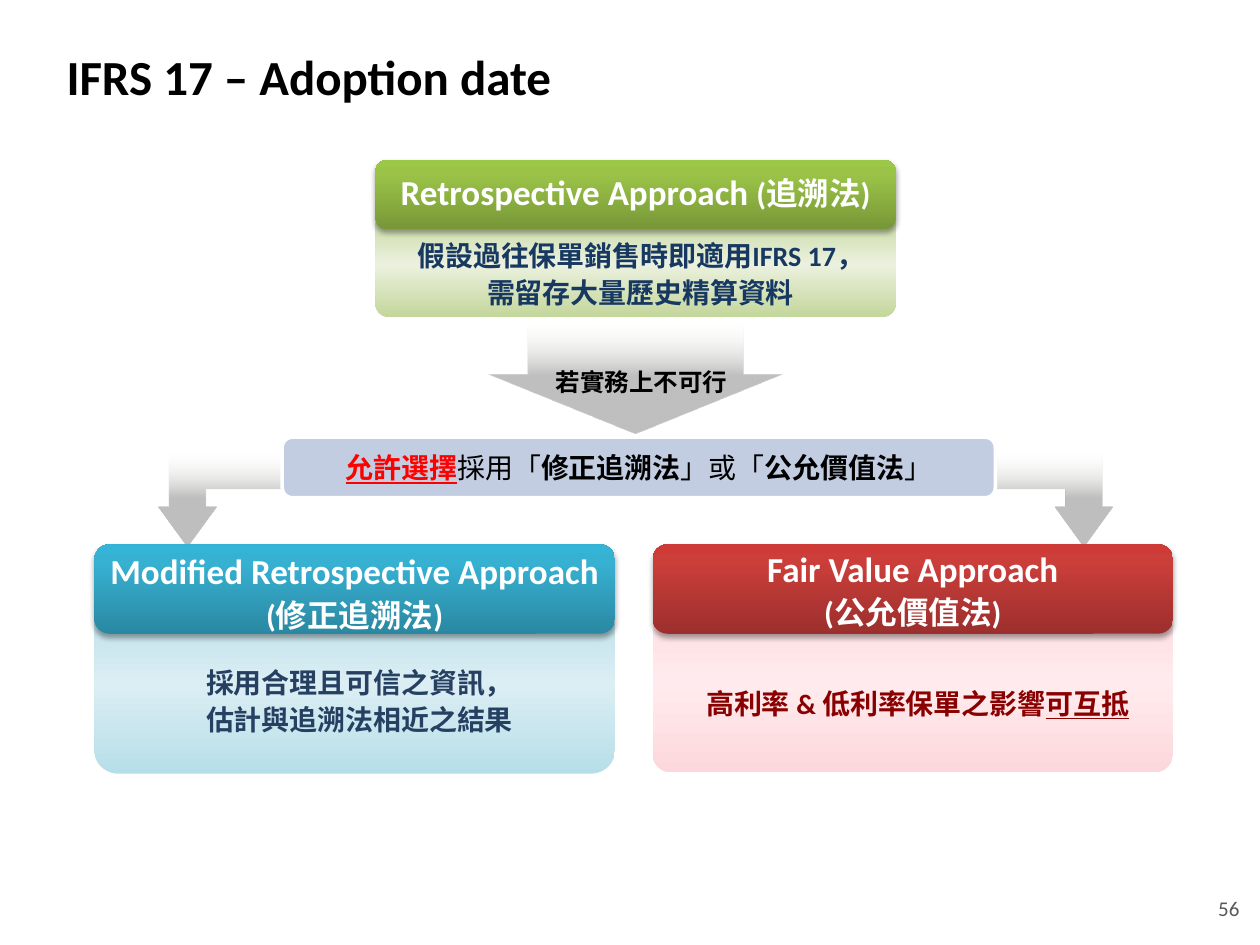
from pptx import Presentation
from pptx.dml.color import RGBColor
from pptx.enum.shapes import MSO_SHAPE
from pptx.enum.text import MSO_ANCHOR, PP_ALIGN
from pptx.oxml import parse_xml
from pptx.oxml.ns import nsdecls, qn
from pptx.util import Inches, Pt

# Content: a run is (text, format); a paragraph is a list of runs
TITLE = "IFRS 17 – Adoption date"
PAGE_NUMBER = "56"
CONDITION = "若實務上不可行"
RED = {"color": "FF0000", "underline": True}
CHOICE = [("允許選擇", RED), ("採用「", {"bold": False}), ("修正追溯法", {}),
          ("」或「", {"bold": False}), ("公允價值法", {}), ("」", {"bold": False})]
SMALLER = {"size": 18}

APPROACHES = [
    {"left": 2.98, "top": 1.27, "head_height": 0.55, "head_spacing": 0.85, "head_inset": 0,
     "head": [("Retrospective Approach ", {}), ("(追溯法)", SMALLER)],
     "head_colors": ("779737", "9BC348", "9DC746"),
     "body_top": 1.68, "body_height": 0.84, "body_inset": 0.12, "corner": 0.132,
     "body": [[("假設過往保單銷售時即適用IFRS 17，", {})], [("需留存大量歷史精算資料", {})]],
     "body_colors": ("C3D69B", "EBF1DE", "C3D69B"), "body_text": "173861"},
    {"left": 5.18, "top": 4.32, "head_height": 0.71, "head_spacing": Pt(24), "head_inset": 0,
     "head": [("Fair Value Approach\n", {}), ("(公允價值法)", SMALLER)],
     "head_colors": ("9C2F2D", "CB3E3A", "CE3B37"),
     "body_top": 4.71, "body_height": 1.42, "body_inset": 0.29, "corner": 0.1,
     "body": [[("高利率 & 低利率保單之影響", {}), ("可互抵", {"underline": True})]],
     "body_colors": ("FCD8DC", "FFEBED", "FCD8DC"), "body_text": "8A0000"},
    {"left": 0.75, "top": 4.32, "head_height": 0.71, "head_spacing": Pt(24), "head_inset": 0.04,
     "head": [("Modified Retrospective Approach\n", {}), ("(修正追溯法)", SMALLER)],
     "head_colors": ("2A88A2", "37B1D2", "34B4D6"),
     "body_top": 4.72, "body_height": 1.42, "body_inset": 0.24, "corner": 0.132,
     "body": [[("採用合理且可信之資訊，", {})], [("估計與追溯法相近之結果", {})]],
     "body_colors": ("B7DEE8", "DBEEF4", "B7DEE8"), "body_text": "254061"},
]
CARD_WIDTH = 4.13

# Arrows: preset, box, adjustments, mirrored
BEND = (0.387, 0.307, 0.425)
BENT_ARROWS = [
    (MSO_SHAPE.BENT_UP_ARROW, (7.85, 3.59, 0.98, 0.75), BEND, True),
    (MSO_SHAPE.BENT_UP_ARROW, (1.26, 3.59, 0.98, 0.75), BEND, False),
]
DOWN_ARROW = (MSO_SHAPE.UP_ARROW, (3.88, 2.56, 2.33, 0.88), (0.73, 0.536), False)


def rgb(value):
    return RGBColor.from_string(value)


def write(holder, paragraphs, size=16, color="000000", bold=True, align=PP_ALIGN.CENTER,
          spacing=None, insets=(0.1, 0.05, 0.1, 0.05), anchor=MSO_ANCHOR.MIDDLE, wrap=True):
    frame = holder.text_frame
    frame.word_wrap = wrap
    frame.vertical_anchor = anchor
    (frame.margin_left, frame.margin_top,
     frame.margin_right, frame.margin_bottom) = map(Inches, insets)
    for index, runs in enumerate(paragraphs):
        paragraph = frame.add_paragraph() if index else frame.paragraphs[0]
        paragraph.alignment = align
        paragraph.line_spacing = spacing
        for text, style in runs:
            run = paragraph.add_run()
            run.text = text.rstrip("\n")
            run.font.name = "Calibri"
            run.font.size = Pt(style.get("size", size))
            run.font.bold = style.get("bold", bold)
            run.font.underline = style.get("underline", False)
            run.font.color.rgb = rgb(style.get("color", color))
            if text.endswith("\n"):
                paragraph.add_line_break()


def add_text(slide, box, text, **style):
    write(slide.shapes.add_textbox(*map(Inches, box)), [[(text, {})]],
          align=PP_ALIGN.LEFT, **style)


def add_plain(slide, preset, box, adjustments=()):
    shape = slide.shapes.add_shape(preset, *map(Inches, box))
    shape.shadow.inherit = False
    shape.line.fill.background()
    for index, value in enumerate(adjustments):
        shape.adjustments[index] = value
    return shape


def fill_gradient(shape, stops, angle):
    """Each stop is (percent, colour, opacity percent)."""
    shape.fill.gradient()
    gradient = shape._element.spPr.find(qn("a:gradFill"))
    marks = "".join(
        f'<a:gs pos="{position * 1000}"><a:srgbClr val="{color}">'
        f'<a:alpha val="{opacity * 1000}"/></a:srgbClr></a:gs>'
        for position, color, opacity in stops)
    gradient.getparent().replace(gradient, parse_xml(
        f'<a:gradFill {nsdecls("a")} rotWithShape="1"><a:gsLst>{marks}</a:gsLst>'
        f'<a:lin ang="{angle * 60000}" scaled="0"/></a:gradFill>'))


def add_drop_shadow(shape):
    shape._element.spPr.find(qn("a:effectLst")).append(parse_xml(
        f'<a:outerShdw {nsdecls("a")} blurRad="{Pt(3.1)}" dist="{Pt(1.8)}" dir="5400000" '
        'rotWithShape="0"><a:srgbClr val="000000"><a:alpha val="35000"/></a:srgbClr>'
        '</a:outerShdw>'))


def add_arrow(slide, preset, box, adjustments, mirrored):
    arrow = add_plain(slide, preset, box, adjustments)
    arrow.rotation = 180
    if mirrored:
        arrow._element.spPr.find(qn("a:xfrm")).set("flipH", "1")
    fill_gradient(arrow, [(52, "BFBFBF", 100), (100, "F9F9F5", 0)], 90)


def add_approach(slide, card):
    body = add_plain(slide, MSO_SHAPE.ROUNDED_RECTANGLE,
                     (card["left"], card["body_top"], CARD_WIDTH, card["body_height"]),
                     [card["corner"]])
    fill_gradient(body, zip((0, 50, 100), card["body_colors"], (100,) * 3), 90)
    write(body, card["body"], color=card["body_text"], spacing=1.1,
          insets=(0.08, card["body_inset"], 0, 0))

    head = add_plain(slide, MSO_SHAPE.ROUNDED_RECTANGLE,
                     (card["left"], card["top"], CARD_WIDTH, card["head_height"]))
    fill_gradient(head, zip((0, 80, 100), card["head_colors"], (100,) * 3), 270)
    add_drop_shadow(head)
    write(head, [card["head"]], size=20, color="FFFFFF", spacing=card["head_spacing"],
          insets=(0, card["head_inset"], 0, 0))


def main():
    deck = Presentation()
    deck.slide_width, deck.slide_height = Inches(10), Inches(7.5)
    slide = deck.slides.add_slide(deck.slide_layouts[6])

    # Title and page number
    add_text(slide, (0.43, 0.3, 9.13, 0.61), TITLE, size=28)
    add_text(slide, (9.57, 7.05, 0.43, 0.31), PAGE_NUMBER, size=12, color="595959", bold=False)

    # Arrows to the two alternatives, then the three approaches
    for arrow in BENT_ARROWS:
        add_arrow(slide, *arrow)
    for card in APPROACHES:
        add_approach(slide, card)

    # Choice bar
    choice_bar = add_plain(slide, MSO_SHAPE.ROUNDED_RECTANGLE, (2.24, 3.47, 5.66, 0.48))
    choice_bar.fill.solid()
    choice_bar.fill.fore_color.rgb = rgb("C2CDE1")
    choice_bar.line.color.rgb = rgb("FFFFFF")
    choice_bar.line.width = Pt(2)
    write(choice_bar, [CHOICE], insets=(0.04,) * 4, wrap=False)

    # Condition that leads to the choice
    add_arrow(slide, *DOWN_ARROW)
    add_text(slide, (4.41, 2.91, 1.37, 0.24), CONDITION, size=14, insets=(0,) * 4,
             anchor=MSO_ANCHOR.TOP, wrap=False)

    deck.save("out.pptx")


if __name__ == "__main__":
    main()
